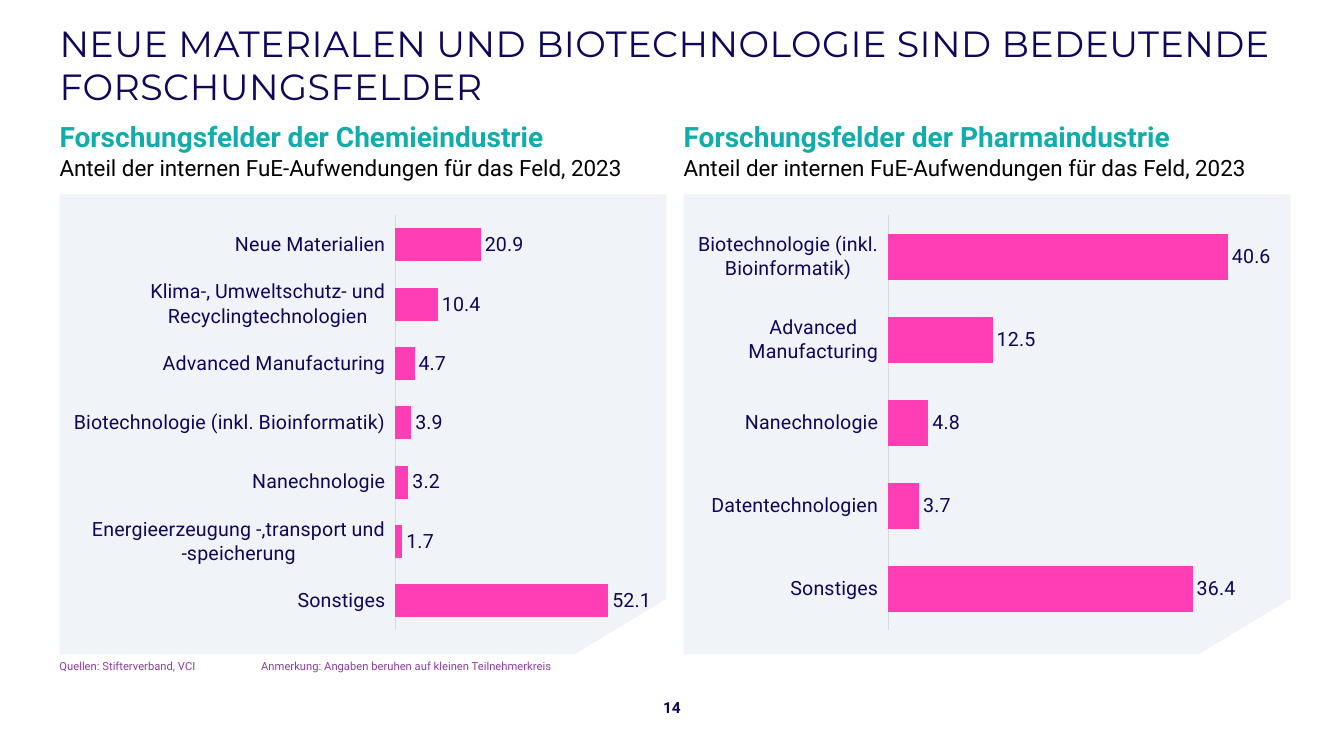
from lxml import etree
from pptx import Presentation
from pptx.chart.data import CategoryChartData
from pptx.dml.color import RGBColor
from pptx.enum.chart import XL_CHART_TYPE as ChartType, XL_LABEL_POSITION as LabelPosition
from pptx.enum.chart import XL_TICK_LABEL_POSITION as TickLabels, XL_TICK_MARK as TickMark
from pptx.enum.text import MSO_ANCHOR as Anchor, MSO_AUTO_SIZE as AutoSize, PP_ALIGN as Align
from pptx.oxml import parse_xml
from pptx.util import Inches, Pt

COLORS = {name: RGBColor.from_string(code) for name, code in {
    "navy": "10065A", "teal": "10ADAA", "pink": "FF3EB5", "purple": "8C3E9F",
    "panel": "F0F3F7", "axis": "D9D9D9", "black": "000000"}.items()}
CHART_NS = "http://schemas.openxmlformats.org/drawingml/2006/chart"

LEFT = 0.59
COLUMN_WIDTH = 6.02
COLUMN_STEP = 6.19
PANEL_TOP, PANEL_HEIGHT = 1.93, 4.56
CUT_WIDTH, CUT_HEIGHT = 0.91, 0.55

# Heading, (category, share) from bottom to top, axis maximum, plot left and width as chart shares
FIELDS = [
    ("Forschungsfelder der Chemieindustrie",
     [("Sonstiges", 52.1),
      ("Energieerzeugung -,transport und -speicherung", 1.7),
      ("Nanechnologie", 3.2),
      ("Biotechnologie (inkl. Bioinformatik)", 3.9),
      ("Advanced Manufacturing", 4.7),
      ("Klima-, Umweltschutz- und Recyclingtechnologien", 10.4),
      ("Neue Materialien", 20.9)],
     60, 0.56, 0.42),
    ("Forschungsfelder der Pharmaindustrie",
     [("Sonstiges", 36.4),
      ("Datentechnologien", 3.7),
      ("Nanechnologie", 4.8),
      ("Advanced Manufacturing", 12.5),
      ("Biotechnologie (inkl. Bioinformatik)", 40.6)],
     45, 0.335, 0.645),
]

prs = Presentation()
prs.slide_width, prs.slide_height = Inches(13.33), Inches(7.5)
slide = prs.slides.add_slide(prs.slide_layouts[5])
shapes = slide.shapes


def set_font(font, size, color, name="Roboto", bold=False):
    font.name, font.size, font.bold = name, Pt(size), bold
    font.color.rgb = COLORS[color]


def add_text(text, left, top, width, height, size, color, bold=False, align=Align.LEFT):
    frame = shapes.add_textbox(*map(Inches, (left, top, width, height))).text_frame
    frame.margin_left = frame.margin_right = frame.margin_top = frame.margin_bottom = 0
    frame.word_wrap = True
    frame.text = text
    frame.paragraphs[0].alignment = align
    set_font(frame.paragraphs[0].font, size, color, bold=bold)
    return frame


# Title
title = shapes.title
title.left, title.top, title.width, title.height = map(Inches, (LEFT, 0.15, 12.2, 0.98))
heading = title.text_frame
heading.text = "NEUE MATERIALEN UND BIOTECHNOLOGIE SIND BEDEUTENDE FORSCHUNGSFELDER"
heading.margin_left = heading.margin_right = 0
heading.margin_top = heading.margin_bottom = Inches(0.04)
heading.vertical_anchor = Anchor.MIDDLE
heading.word_wrap = True
heading.auto_size = AutoSize.NONE
heading.paragraphs[0].alignment = Align.LEFT
set_font(heading.paragraphs[0].font, 26, "navy", "Montserrat")
heading.paragraphs[0].runs[0].font._element.set("spc", "30")

# One column per industry: panel with cut corner, headings, bar chart
for column, (industry, shares, axis_max, plot_left, plot_width) in enumerate(FIELDS):
    left = LEFT + column * COLUMN_STEP
    right, bottom = left + COLUMN_WIDTH, PANEL_TOP + PANEL_HEIGHT

    outline = shapes.build_freeform(Inches(left), Inches(PANEL_TOP))
    outline.add_line_segments([(Inches(x), Inches(y)) for x, y in (
        (right, PANEL_TOP), (right, bottom - CUT_HEIGHT),
        (right - CUT_WIDTH, bottom), (left, bottom))])
    panel = outline.convert_to_shape()
    panel.shadow.inherit = False
    panel.fill.solid()
    panel.fill.fore_color.rgb = COLORS["panel"]
    panel.line.fill.background()

    add_text(industry, left, 1.19, COLUMN_WIDTH, 0.31, 20, "teal", bold=True)
    add_text("Anteil der internen FuE-Aufwendungen für das Feld, 2023",
             left, 1.53, COLUMN_WIDTH, 0.28, 16, "black")

    data = CategoryChartData(number_format="0.0")
    data.categories = [field for field, share in shares]
    data.add_series("Anteil", [share for field, share in shares])
    chart = shapes.add_chart(ChartType.BAR_CLUSTERED, Inches(left + 0.09), Inches(2.05),
                             Inches(5.79), Inches(4.29), data).chart
    chart.has_legend = chart.has_title = False
    set_font(chart.font, 14, "navy")

    fields = chart.category_axis
    fields.major_tick_mark = fields.minor_tick_mark = TickMark.NONE
    fields.tick_label_position = TickLabels.LOW
    fields.format.line.color.rgb = COLORS["axis"]
    fields.format.line.width = Pt(0.75)
    set_font(fields.tick_labels.font, 14, "navy")
    values = chart.value_axis
    values.minimum_scale, values.maximum_scale = 0, axis_max
    values.has_major_gridlines = False
    values.visible = False

    plot = chart.plots[0]
    plot.gap_width = 80
    plot.vary_by_categories = False
    bars = plot.series[0].format.fill
    bars.solid()
    bars.fore_color.rgb = COLORS["pink"]
    plot.has_data_labels = True
    labels = plot.data_labels
    labels.show_value = True
    labels.position = LabelPosition.OUTSIDE_END
    labels.number_format, labels.number_format_is_linked = "0.0", False
    set_font(labels.font, 14, "navy")

    plot_area = chart._chartSpace.chart.plotArea
    for automatic in plot_area.findall(f"{{{CHART_NS}}}layout"):
        plot_area.remove(automatic)
    layout = parse_xml(f'<c:layout xmlns:c="{CHART_NS}"><c:manualLayout/></c:layout>')
    for tag, value in (("layoutTarget", "inner"), ("xMode", "edge"), ("yMode", "edge"),
                       ("x", plot_left), ("y", 0.02), ("w", plot_width), ("h", 0.96)):
        etree.SubElement(layout[0], f"{{{CHART_NS}}}{tag}").set("val", str(value))
    plot_area.insert(0, layout)

# Footer
add_text("Quellen: Stifterverband, VCI", LEFT, 6.54, 1.9, 0.13, 8, "purple")
add_text("Anmerkung: Angaben beruhen auf kleinen Teilnehmerkreis",
         2.59, 6.54, 5.08, 0.13, 8, "purple")
page_number = add_text("14", 6.37, 6.88, 0.59, 0.28, 11, "navy", bold=True, align=Align.CENTER)
page_number.vertical_anchor = Anchor.MIDDLE

prs.save("out.pptx")
